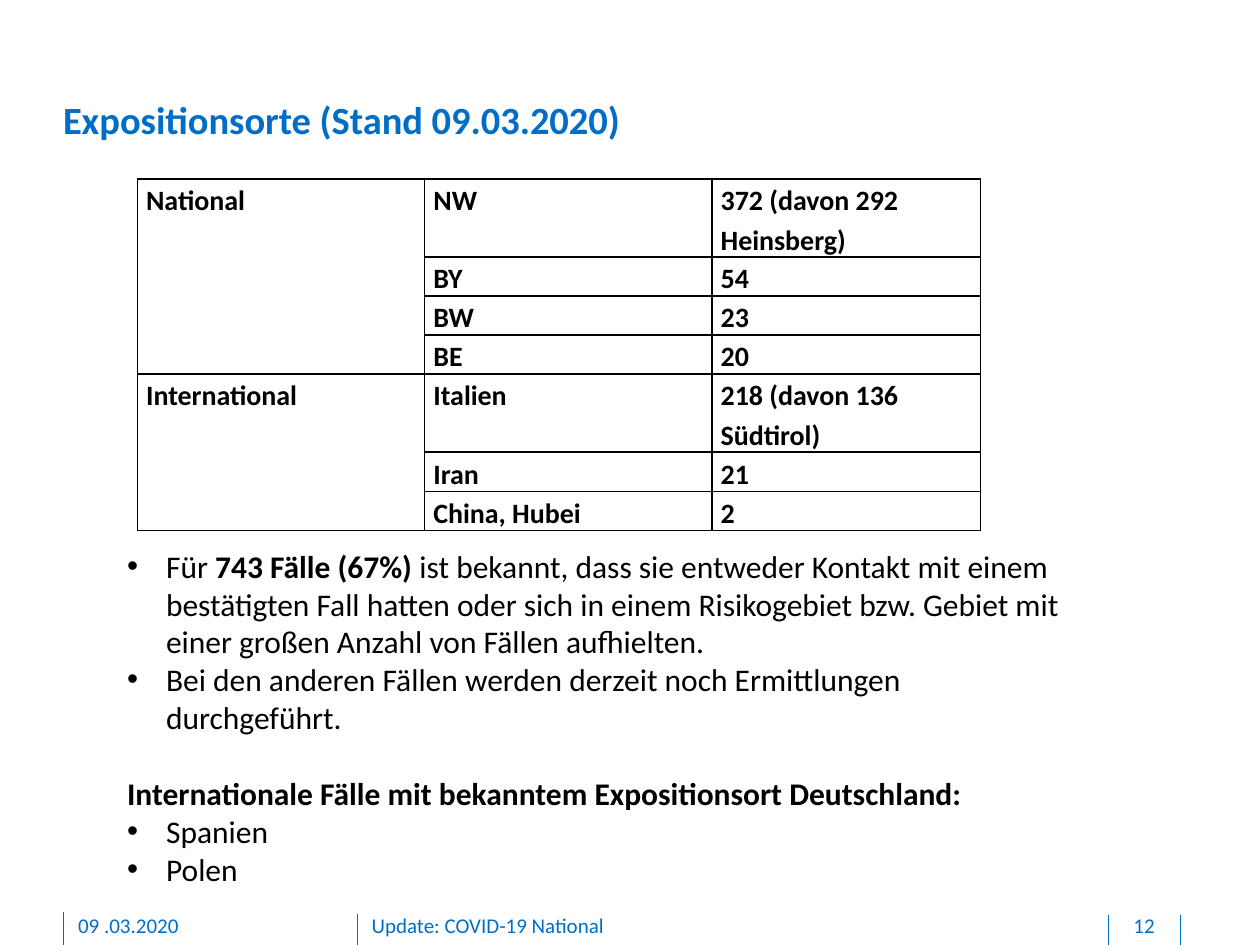
from dataclasses import dataclass

from lxml.etree import SubElement
from pptx import Presentation
from pptx.dml.color import RGBColor
from pptx.enum.shapes import MSO_CONNECTOR
from pptx.enum.text import MSO_ANCHOR, PP_ALIGN
from pptx.oxml import parse_xml
from pptx.oxml.ns import nsdecls, qn
from pptx.util import Inches, Pt

BLUE = RGBColor(0x00, 0x6E, 0xC7)
BLACK = RGBColor(0x00, 0x00, 0x00)
FONT = "Calibri"


@dataclass
class Footer:
    left: float
    width: float
    text: str
    align: PP_ALIGN = PP_ALIGN.LEFT


@dataclass
class Group:
    name: str
    rows: list[tuple[str, str]]


@dataclass
class Para:
    runs: list[tuple[str, bool]]
    bullet: bool = True
    before: float = 0


RULES = [(0.5, 7.24), (2.84, 7.25), (8.8, 7.26), (9.37, 7.26)]
FOOTERS = [
    Footer(0.62, 2.03, "09 .03.2020"),
    Footer(2.95, 5.67, "Update: COVID-19 National"),
    Footer(8.81, 0.54, "12", PP_ALIGN.CENTER),
]
GROUPS = [
    Group("National", [("NW", "372 (davon 292 Heinsberg)"), ("BY", "54"),
                       ("BW", "23"), ("BE", "20")]),
    Group("International", [("Italien", "218 (davon 136 Südtirol)"),
                            ("Iran", "21"), ("China, Hubei", "2")]),
]
COLS = [2.28, 2.28, 2.13]
ROW = 0.31
NOTES = [
    Para([("Für ", False), ("743 Fälle (67%) ", True),
          ("ist bekannt, dass sie entweder Kontakt mit einem bestätigten Fall "
           "hatten oder sich in einem Risikogebiet bzw. Gebiet mit einer "
           "großen Anzahl von Fällen aufhielten.", False)]),
    Para([("Bei den anderen Fällen werden derzeit noch Ermittlungen "
           "durchgeführt.", False)]),
    Para([("Internationale Fälle mit bekanntem Expositionsort Deutschland:",
           True)], bullet=False, before=22),
    Para([("Spanien", False)]),
    Para([("Polen", False)]),
]


def add_run(para, text: str, size: float, color: RGBColor,
            bold: bool = False) -> None:
    run = para.add_run()
    run.text = text
    font = run.font
    font.name, font.size, font.bold = FONT, Pt(size), bold
    font.color.rgb = color


def set_pad(frame, left: float, top: float, right: float, low: float) -> None:
    frame.margin_left, frame.margin_top = Inches(left), Inches(top)
    frame.margin_right, frame.margin_bottom = Inches(right), Inches(low)


def add_box(slide, left: float, top: float, width: float, height: float):
    box = slide.shapes.add_textbox(Inches(left), Inches(top),
                                   Inches(width), Inches(height))
    box.text_frame.word_wrap = True
    return box.text_frame


def add_rule(slide, x: float, top: float) -> None:
    rule = slide.shapes.add_connector(MSO_CONNECTOR.STRAIGHT, Inches(x),
                                      Inches(top), Inches(x), Inches(7.5))
    rule.line.color.rgb = BLUE
    rule.line.width = Pt(0.5)
    SubElement(rule._element.spPr, qn("a:effectLst"))


def add_footer(slide, foot: Footer) -> None:
    frame = add_box(slide, foot.left, 7.24, foot.width, 0.21)
    set_pad(frame, 0, 0, 0, 0.05)
    para = frame.paragraphs[0]
    para.alignment = foot.align
    add_run(para, foot.text, 12, BLUE)


def style_cell(cell) -> None:
    cell.fill.background()
    set_pad(cell, 0.07, 0, 0.07, 0)
    props = cell._tc.get_or_add_tcPr()
    for i, side in enumerate("LRTB"):
        props.insert(i, parse_xml(
            f'<a:ln{side} {nsdecls("a")} w="{Pt(1)}"><a:solidFill>'
            f'<a:srgbClr val="{BLACK}"/></a:solidFill></a:ln{side}>'))


def fill_cell(cell, text: str) -> None:
    para = cell.text_frame.paragraphs[0]
    para.line_spacing = 1.15
    para.space_after = Pt(6)
    add_run(para, text, 16, BLACK, True)


def add_places(slide, groups: list[Group]) -> None:
    count = sum(len(group.rows) for group in groups)
    table = slide.shapes.add_table(count, len(COLS), Inches(1.09), Inches(1.42),
                                   Inches(sum(COLS)), Inches(2.76)).table
    table.first_row = table.horz_banding = False
    for col, width in zip(table.columns, COLS):
        col.width = Inches(width)
    for cell in table.iter_cells():
        style_cell(cell)
    top = 0
    for group in groups:
        last = top + len(group.rows) - 1
        fill_cell(table.cell(top, 0), group.name)
        for r, (place, cases) in enumerate(group.rows, top):
            # The first row of each group holds two lines
            table.rows[r].height = Inches(ROW * (2 if r == top else 1))
            fill_cell(table.cell(r, 1), place)
            fill_cell(table.cell(r, 2), cases)
        table.cell(top, 0).merge(table.cell(last, 0))
        top = last + 1


def add_notes(slide, notes: list[Para]) -> None:
    frame = add_box(slide, 0.91, 4.29, 7.71, 2.83)
    for i, note in enumerate(notes):
        para = frame.add_paragraph() if i else frame.paragraphs[0]
        if note.bullet:
            props = para._p.get_or_add_pPr()
            props.set("marL", str(Inches(0.31)))
            props.set("indent", str(Inches(-0.31)))
            SubElement(props, qn("a:buFont"), typeface="Arial")
            SubElement(props, qn("a:buChar"), char="•")
        if note.before:
            para.space_before = Pt(note.before)
        for text, bold in note.runs:
            add_run(para, text, 18, BLACK, bold)


def main() -> None:
    prs = Presentation()
    prs.slide_width, prs.slide_height = Inches(10), Inches(7.5)
    slide = prs.slides.add_slide(prs.slide_layouts[5])

    # Footer rules and texts
    for x, top in RULES:
        add_rule(slide, x, top)
    for foot in FOOTERS:
        add_footer(slide, foot)

    # Title
    title = slide.shapes.title
    title.left, title.top = Inches(0.5), Inches(0.76)
    title.width, title.height = Inches(8.85), Inches(0.37)
    frame = title.text_frame
    set_pad(frame, 0, 0, 0, 0)
    frame.vertical_anchor = MSO_ANCHOR.MIDDLE
    frame.paragraphs[0].alignment = PP_ALIGN.LEFT
    add_run(frame.paragraphs[0], "Expositionsorte (Stand 09.03.2020)",
            22, BLUE, True)

    # Table of places and notes below it
    add_places(slide, GROUPS)
    add_notes(slide, NOTES)
    prs.save("out.pptx")


if __name__ == "__main__":
    main()
